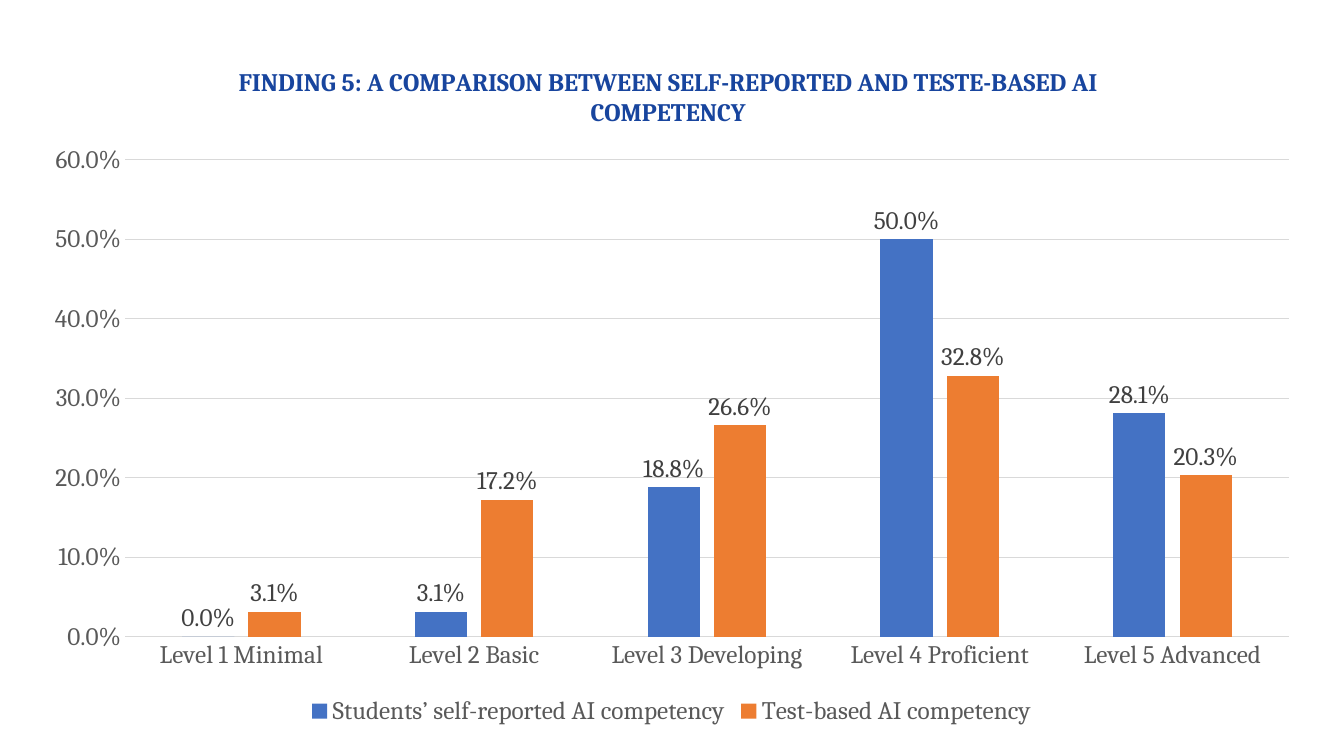
"""Build a slide comparing self-reported and test-based AI competency."""
from dataclasses import dataclass

from lxml import etree
from pptx import Presentation
from pptx import util as u
from pptx.chart import data as chart_data
from pptx.dml import color
from pptx.enum import chart as chart_enum
from pptx.oxml import ns

EMU_PER_PX = 914400 / 100.8
PAGE_SIZE = (1344, 756)
CHART_BOX = (29, 24, 1285, 707)
TITLE_CORNER = (234, 61)
PLOT_BOX = (125, 160, 1164, 477)

TITLE = "FINDING 5: A COMPARISON BETWEEN SELF-REPORTED AND TESTE-BASED AI COMPETENCY"
LEVELS = ("Level 1 Minimal", "Level 2 Basic", "Level 3 Developing",
          "Level 4 Proficient", "Level 5 Advanced")
SERIES = {
    "Students’ self-reported AI competency": (0, 0.031, 0.188, 0.5, 0.281),
    "Test-based AI competency": (0.031, 0.172, 0.266, 0.328, 0.203),
}


@dataclass(frozen=True)
class Theme:
    """Fonts, sizes and colours of the slide."""

    font: str = "Cambria"
    size: int = 18
    title: str = "18459E"
    axis: str = "595959"
    label: str = "404040"
    rule: str = "D9D9D9"
    rule_width: float = 0.75
    bars: tuple = ("4472C4", "ED7D31")
    percent: str = "0.0%"


THEME = Theme()


def px(length):
    """Turn pixels into EMU."""
    return u.Emu(round(length * EMU_PER_PX))


def style_font(font, shade, bold=False):
    """Apply the theme font in one colour."""
    font.name = THEME.font
    font.size = u.Pt(THEME.size)
    font.bold = bold
    font.color.rgb = color.RGBColor.from_string(shade)


def style_rule(line):
    """Draw a thin grey line."""
    line.width = u.Pt(THEME.rule_width)
    line.color.rgb = color.RGBColor.from_string(THEME.rule)


def set_layout(parent, index, box, inner=False):
    """Fix a chart part at a place given in slide pixels."""
    for old in parent.findall(ns.qn("c:layout")):
        parent.remove(old)
    layout = etree.Element(ns.qn("c:layout"))
    manual = etree.SubElement(layout, ns.qn("c:manualLayout"))
    left, top, width, height = CHART_BOX
    shifted = (box[0] - left, box[1] - top, *box[2:])
    fractions = [part / whole for part, whole in zip(shifted, (width, height) * 2)]
    settings = [("layoutTarget", "inner")] if inner else []
    settings += [("xMode", "edge"), ("yMode", "edge")]
    settings += [(name, f"{value:.4f}") for name, value in zip("xywh", fractions)]
    for name, value in settings:
        etree.SubElement(manual, ns.qn(f"c:{name}")).set("val", value)
    parent.insert(index, layout)


def add_column_chart(page):
    """Add the clustered columns and return the chart."""
    table = chart_data.CategoryChartData(number_format=THEME.percent)
    table.categories = LEVELS
    for name, values in SERIES.items():
        table.add_series(name, values)
    frame = page.shapes.add_chart(
        chart_enum.XL_CHART_TYPE.COLUMN_CLUSTERED, *map(px, CHART_BOX), table)
    chart = frame.chart
    style_font(chart.font, THEME.axis)
    set_layout(chart.plots[0]._element.getparent(), 0, PLOT_BOX, inner=True)
    return chart


def add_title(chart):
    """Write the chart title."""
    chart.has_title = True
    title = chart.chart_title
    span = title.text_frame.paragraphs[0].add_run()
    span.text = TITLE
    style_font(span.font, THEME.title, bold=True)
    title.include_in_layout = False
    set_layout(title._element, 1, TITLE_CORNER)


def style_axes(chart):
    """Format both axes and the gridlines."""
    levels, shares = chart.category_axis, chart.value_axis
    for axis in (levels, shares):
        axis.major_tick_mark = chart_enum.XL_TICK_MARK.NONE
        axis.minor_tick_mark = chart_enum.XL_TICK_MARK.NONE
        style_font(axis.tick_labels.font, THEME.axis)
    style_rule(levels.format.line)
    shares.format.line.fill.background()
    shares.minimum_scale, shares.maximum_scale, shares.major_unit = 0, 0.6, 0.1
    shares.tick_labels.number_format = THEME.percent
    shares.tick_labels.number_format_is_linked = False
    shares.has_major_gridlines = True
    style_rule(shares.major_gridlines.format.line)


def style_columns(chart):
    """Colour the columns and label their values."""
    plot = chart.plots[0]
    plot.vary_by_categories = False
    plot.gap_width, plot.overlap = 219, -27
    for series, shade in zip(plot.series, THEME.bars):
        series.format.fill.solid()
        series.format.fill.fore_color.rgb = color.RGBColor.from_string(shade)
        series.invert_if_negative = False
        labels = series.data_labels
        labels.show_value = True
        labels.position = chart_enum.XL_LABEL_POSITION.OUTSIDE_END
        labels.number_format = THEME.percent
        labels.number_format_is_linked = False
        style_font(labels.font, THEME.label)


def add_legend(chart):
    """Place the legend below the columns."""
    chart.has_legend = True
    chart.legend.position = chart_enum.XL_LEGEND_POSITION.BOTTOM
    chart.legend.include_in_layout = False
    style_font(chart.legend.font, THEME.axis)


def main():
    """Build and save the deck."""
    deck = Presentation()
    deck.slide_width, deck.slide_height = map(px, PAGE_SIZE)
    page = deck.slides.add_slide(deck.slide_layouts.get_by_name("Blank"))
    chart = add_column_chart(page)
    add_title(chart)
    style_axes(chart)
    style_columns(chart)
    add_legend(chart)
    deck.save("out.pptx")


if __name__ == "__main__":
    main()
